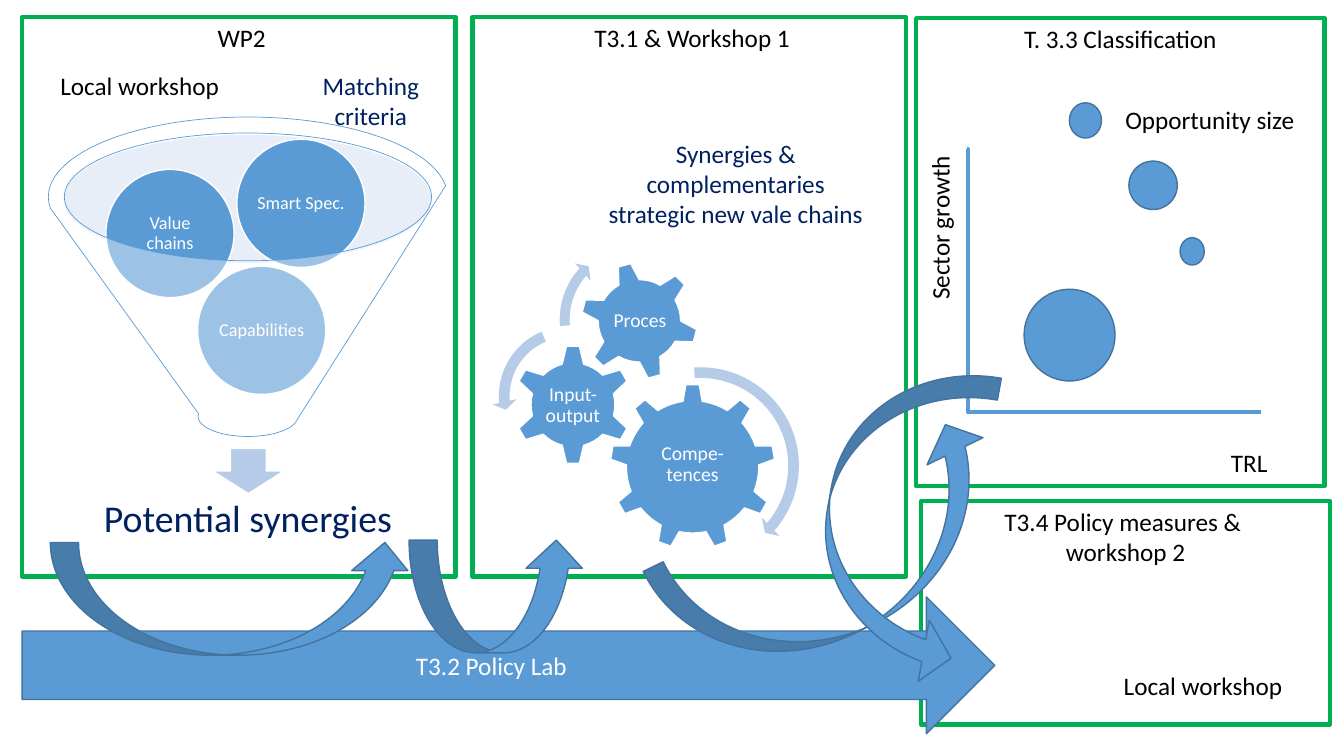
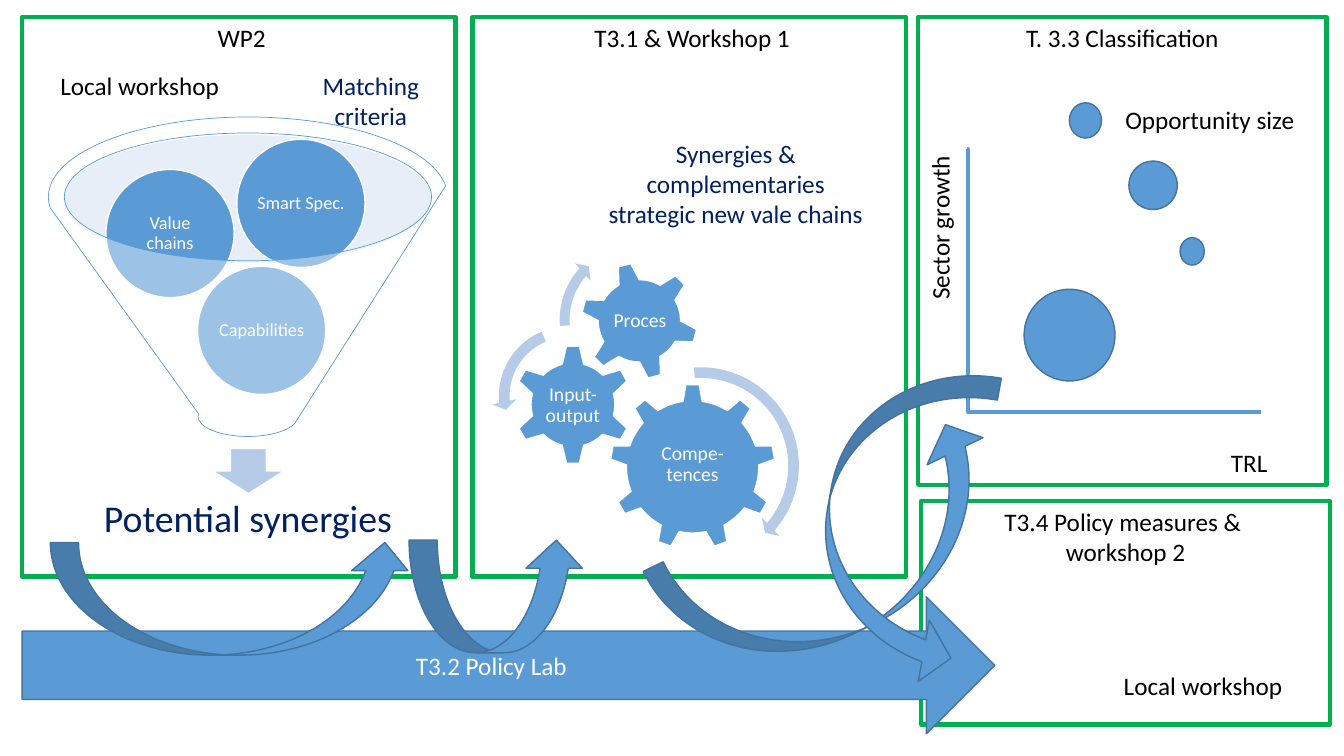
"""Build two slides that map work packages, workshops and the policy lab."""
from dataclasses import dataclass
from typing import Any, Optional

import lxml.etree
import pptx
import pptx.dml.color
import pptx.enum.shapes
import pptx.enum.text
import pptx.oxml.ns
import pptx.util

Cm = pptx.util.Cm
SHAPE = pptx.enum.shapes.MSO_SHAPE
ALIGN = pptx.enum.text.PP_ALIGN
ANCHOR = pptx.enum.text.MSO_ANCHOR
qn = pptx.oxml.ns.qn


@dataclass(frozen=True)
class Theme:
    font: str = "Calibri"
    black: str = "000000"
    white: str = "FFFFFF"
    navy: str = "002060"
    green: str = "00B050"
    blue: str = "5B9BD5"
    edge: str = "43739E"
    pale: str = "B5CBE7"
    mist: str = "C4D5EB"
    body: int = 18
    headline: int = 27
    gear: int = 14
    circle: int = 13


T = Theme()


@dataclass(frozen=True)
class Paint:
    fill: Optional[str] = None
    line: Optional[str] = None
    weight: float = 1
    alpha: int = 100


@dataclass(frozen=True)
class Type:
    size: int = T.body
    color: str = T.black
    align: Any = ALIGN.CENTER
    anchor: Any = ANCHOR.TOP
    inset: tuple[float, float] = (0.25, 0.13)
    spacing: float = 1


@dataclass(frozen=True)
class Item:
    left: float
    top: float
    width: float
    height: float
    kind: Any = None
    paint: Paint = Paint()
    text: str = ""
    type: Type = Type()
    turn: float = 0
    flip: bool = False
    adj: tuple[float, ...] = ()


PANEL = Paint(line=T.green, weight=3)
SOLID = Paint(T.blue, T.edge)
PART = Paint(T.blue, T.white)
SPIN = Paint(T.pale)

LEFT = Type(align=ALIGN.LEFT)
NAVY = Type(color=T.navy)
BAND = Type(color=T.white, anchor=ANCHOR.MIDDLE)
HEADLINE = Type(T.headline, T.navy, anchor=ANCHOR.MIDDLE, inset=(0.53, 0.53), spacing=0.9)
CIRCLE = Type(T.circle, T.white, anchor=ANCHOR.MIDDLE, inset=(0, 0), spacing=0.9)
GEAR = Type(T.gear, T.white, anchor=ANCHOR.MIDDLE, inset=(0, 0), spacing=0.9)

BEND = (0.15, 0.42, 0.19)


def panel(left: float, top: float, width: float, height: float, title: str) -> Item:
    return Item(left, top, width, height, SHAPE.RECTANGLE, PANEL, title)


def circle(left: float, top: float, text: str) -> Item:
    return Item(left, top, 3.23, 3.23, SHAPE.OVAL, PART, text, CIRCLE)


def bubble(left: float, top: float, width: float, height: float) -> Item:
    return Item(left, top, width, height, SHAPE.OVAL, SOLID)


def gear(left: float, top: float, size: float, kind: Any, turn: float = 0) -> Item:
    return Item(left, top, size, size, kind, PART, turn=turn)


def spin(left: float, top: float, size: float, kind: Any, adj: tuple[float, ...]) -> Item:
    return Item(left, top, size, size, kind, SPIN, adj=adj)


def label(left: float, top: float, width: float, height: float, text: str,
          style: Type = Type(), turn: float = 0) -> Item:
    return Item(left, top, width, height, text=text, type=style, turn=turn)


def swoop(left: float, top: float, width: float, height: float,
          turn: float = 180, adj: tuple[float, ...] = ()) -> Item:
    return Item(left, top, width, height, SHAPE.CURVED_DOWN_ARROW, SOLID,
                turn=turn, flip=True, adj=adj)


WORKSHOPS = [
    panel(0.56, 0.43, 10.92, 14.1, " WP2"),
    panel(11.91, 0.43, 10.92, 14.1, " T3.1 & Workshop 1"),
]
FUNNEL = [
    Item(1.6, 3.4, 9.27, 3.23, SHAPE.OVAL, Paint(T.mist, alpha=40)),
    Item(5.36, 11.3, 1.8, 1.14, SHAPE.DOWN_ARROW, Paint(T.pale, T.white)),
    label(1.93, 12.04, 8.64, 2.16, "Potential synergies", HEADLINE),
    circle(4.98, 6.71, "Capabilities"),
    circle(2.67, 4.27, "Value chains"),
    circle(5.97, 3.51, "Smart Spec."),
    Item(1.22, 2.95, 10.06, 8.05, SHAPE.FUNNEL, Paint(T.white, T.blue, 0.5, 40)),
    label(7.82, 1.63, 3.05, 1.8, "Matching\ncriteria", NAVY),
]
GEARS = [
    gear(15.37, 9.68, 4.17, SHAPE.GEAR_9),
    label(16.21, 10.64, 2.49, 2.13, "Compe-tences", GEAR),
    gear(12.93, 8.69, 3.02, SHAPE.GEAR_6),
    label(13.6, 9.47, 1.68, 1.5, "Input-output", GEAR),
    gear(14.63, 6.6, 2.97, SHAPE.GEAR_6, 345),
    label(15.29, 7.26, 1.68, 1.68, "Proces", GEAR),
    spin(14.99, 9.07, 5.33, SHAPE.CIRCULAR_ARROW, (0.05, 2.99, 24.66, 159.74, 0.06)),
    spin(12.4, 8.05, 3.86, SHAPE.LEFT_CIRCULAR_ARROW, (0.07, 4.3, 104.89, 148.38, 0.08)),
    spin(13.94, 5.97, 4.17, SHAPE.CIRCULAR_ARROW, (0.06, 3.94, 133.14, 105.08, 0.07)),
    label(15.06, 3.35, 6.96, 3.33, "Synergies & complementaries strategic new vale chains", NAVY),
]
BUBBLES = [
    bubble(28.45, 4.06, 1.22, 1.22),
    bubble(29.74, 5.99, 0.61, 0.69),
    bubble(25.81, 7.29, 2.29, 2.31),
    label(30.35, 11.13, 2.26, 1.02, "TRL"),
    label(27.86, 2.51, 5.26, 1.02, "Opportunity size"),
    label(20.83, 4.45, 5.69, 1.02, "Sector growth", LEFT, 270),
    bubble(26.95, 2.59, 0.81, 0.89),
]
POLICY = [
    panel(23.22, 12.62, 10.29, 5.64, "T3.4 Policy measures & \nworkshop 2"),
    Item(0.56, 15.04, 24.51, 3.45, SHAPE.RIGHT_ARROW, SOLID, "T3.2 Policy Lab", BAND),
    swoop(1.27, 13.67, 9.14, 2.84),
    swoop(10.31, 13.61, 4.42, 2.84),
    swoop(16.56, 12.19, 9.25, 3.73, 154.1, BEND),
    swoop(18.72, 11.25, 7.95, 3.73, 280.2, BEND),
    label(1.27, 1.63, 5.28, 1.02, "Local workshop", LEFT),
    label(28.07, 16.76, 5.28, 1.02, "Local workshop", LEFT),
]
CLASSIFICATION_CORNERS = [(23.09, 0.46), (23.14, 0.43)]


def apply(target: Any, values: dict[str, Any]) -> None:
    for name, value in values.items():
        setattr(target, name, value)


def rgb(value: str) -> pptx.dml.color.RGBColor:
    return pptx.dml.color.RGBColor.from_string(value)


def paint_shape(sp: Any, paint: Paint) -> None:
    if paint.fill:
        sp.fill.solid()
        sp.fill.fore_color.rgb = rgb(paint.fill)
        if paint.alpha < 100:
            color = sp._element.spPr.find(qn("a:solidFill"))[0]
            lxml.etree.SubElement(color, qn("a:alpha"), val=str(paint.alpha * 1000))
    else:
        sp.fill.background()
    if paint.line:
        sp.line.color.rgb = rgb(paint.line)
        sp.line.width = pptx.util.Pt(paint.weight)
    else:
        sp.line.fill.background()


def write_text(sp: Any, text: str, style: Type) -> None:
    tf = sp.text_frame
    side, end = (Cm(v) for v in style.inset)
    apply(tf, {"word_wrap": True, "vertical_anchor": style.anchor,
               "margin_left": side, "margin_right": side,
               "margin_top": end, "margin_bottom": end})
    p = tf.paragraphs[0]
    p.text = text
    apply(p, {"alignment": style.align, "line_spacing": style.spacing})
    for r in p.runs:
        apply(r.font, {"name": T.font, "size": pptx.util.Pt(style.size)})
        r.font.color.rgb = rgb(style.color)


def draw(s: Any, item: Item) -> None:
    box = [Cm(v) for v in (item.left, item.top, item.width, item.height)]
    if item.kind is None:
        sp = s.shapes.add_textbox(*box)
    else:
        sp = s.shapes.add_shape(item.kind, *box)
        sp.shadow.inherit = False
        paint_shape(sp, item.paint)
        for i, value in enumerate(item.adj):
            sp.adjustments[i] = value
    sp.rotation = item.turn
    if item.flip:
        sp._element.spPr.find(qn("a:xfrm")).set("flipH", "1")
    if item.text:
        write_text(sp, item.text, item.type)


def draw_axes(s: Any) -> None:
    elbow = pptx.enum.shapes.MSO_CONNECTOR.ELBOW
    axes = s.shapes.add_connector(elbow, Cm(24.38), Cm(3.76), Cm(31.78), Cm(10.39))
    axes.line.color.rgb = rgb(T.blue)
    axes.line.width = pptx.util.Pt(3)
    props = axes._element.spPr
    guides = props.find(qn("a:prstGeom")).find(qn("a:avLst"))
    lxml.etree.SubElement(guides, qn("a:gd"), name="adj1", fmla="val 200")
    lxml.etree.SubElement(props, qn("a:effectLst"))


def main() -> None:
    prs = pptx.Presentation()
    apply(prs, {"slide_width": Cm(33.87), "slide_height": Cm(19.05)})
    for left, top in CLASSIFICATION_CORNERS:
        s = prs.slides.add_slide(prs.slide_layouts[6])
        for item in WORKSHOPS + FUNNEL + GEARS:
            draw(s, item)
        draw_axes(s)
        classification = panel(left, top, 10.29, 11.79, "T. 3.3 Classification")
        for item in BUBBLES + [classification] + POLICY:
            draw(s, item)
    prs.save("out.pptx")


if __name__ == "__main__":
    main()
